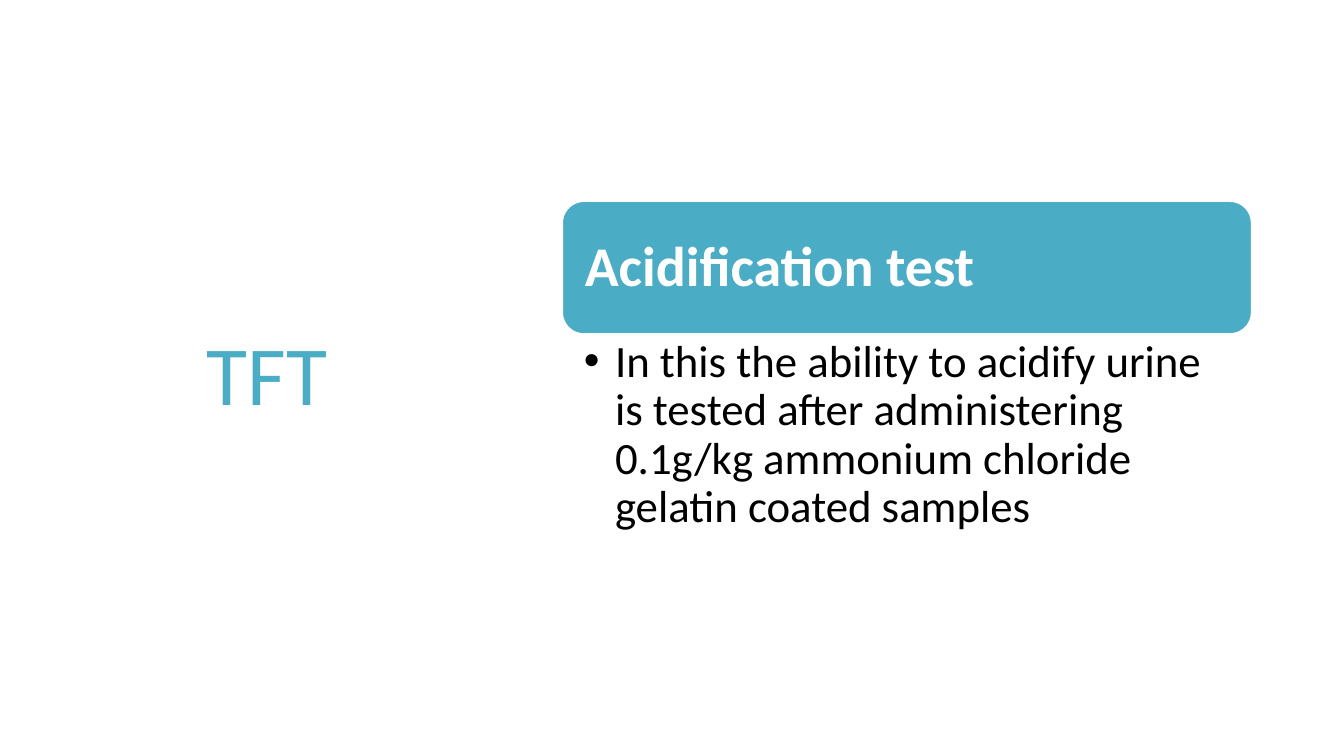
"""Builds the TFT slide about the acidification test."""
from lxml import etree
from pptx import Presentation
from pptx.dml.color import RGBColor
from pptx.enum.shapes import MSO_SHAPE
from pptx.enum.text import MSO_ANCHOR, PP_ALIGN
from pptx.oxml.ns import qn
from pptx.util import Inches, Pt

COLORS = {"accent": "4BACC6", "white": "FFFFFF", "black": "000000"}


class SlideBuilder:
    font_name = "Calibri"

    def __init__(self, presentation):
        self.slide = presentation.slides.add_slide(presentation.slide_layouts[6])

    def color(self, name):
        return RGBColor.from_string(COLORS[name])

    def banner(self, left, top, width, height):
        shape = self.slide.shapes.add_shape(
            MSO_SHAPE.ROUNDED_RECTANGLE,
            Inches(left), Inches(top), Inches(width), Inches(height))
        shape.shadow.inherit = False
        shape.fill.solid()
        shape.fill.fore_color.rgb = self.color("accent")
        shape.line.color.rgb = self.color("white")
        shape.line.width = Pt(2)

    def text(self, content, left, top, width, height, size, color, insets,
             anchor=MSO_ANCHOR.MIDDLE, align=PP_ALIGN.LEFT, bold=False,
             spacing=1.0, bullet_indent=None):
        frame = self.slide.shapes.add_textbox(
            Inches(left), Inches(top), Inches(width), Inches(height)).text_frame
        frame.word_wrap = True
        frame.vertical_anchor = anchor
        (frame.margin_left, frame.margin_top,
         frame.margin_right, frame.margin_bottom) = map(Inches, insets)
        paragraph = frame.paragraphs[0]
        paragraph.text = content
        paragraph.alignment = align
        paragraph.line_spacing = spacing
        if bullet_indent:
            self.bullet(paragraph, bullet_indent)
        font = paragraph.font
        font.name = self.font_name
        font.size = Pt(size)
        font.bold = bold
        font.color.rgb = self.color(color)

    def bullet(self, paragraph, indent):
        properties = paragraph._p.get_or_add_pPr()
        properties.set("marL", str(Inches(indent)))
        properties.set("indent", str(-Inches(indent)))
        etree.SubElement(properties, qn("a:buFont")).set("typeface", "Arial")
        etree.SubElement(properties, qn("a:buChar")).set("char", "•")


def main():
    presentation = Presentation()
    presentation.slide_width = Inches(13.33)
    presentation.slide_height = Inches(7.5)
    builder = SlideBuilder(presentation)
    builder.text("TFT", 0.57, 0.68, 4.16, 6.02, 60, "accent",
                 (0.1, 0.05, 0.1, 0.05), align=PP_ALIGN.CENTER)
    builder.banner(5.57, 1.99, 6.85, 1.33)
    builder.text("Acidification test", 5.63, 2.06, 6.72, 1.2, 40, "white",
                 (0.17, 0.17, 0.17, 0.17), bold=True, spacing=0.9)
    builder.text("In this the ability to acidify urine is tested after "
                 "administering 0.1g/kg ammonium chloride gelatin coated samples",
                 5.57, 3.32, 6.85, 2.06, 32, "black", (0.22, 0.04, 0.25, 0.04),
                 anchor=MSO_ANCHOR.TOP, spacing=0.9, bullet_indent=0.31)
    presentation.save("out.pptx")


if __name__ == "__main__":
    main()
